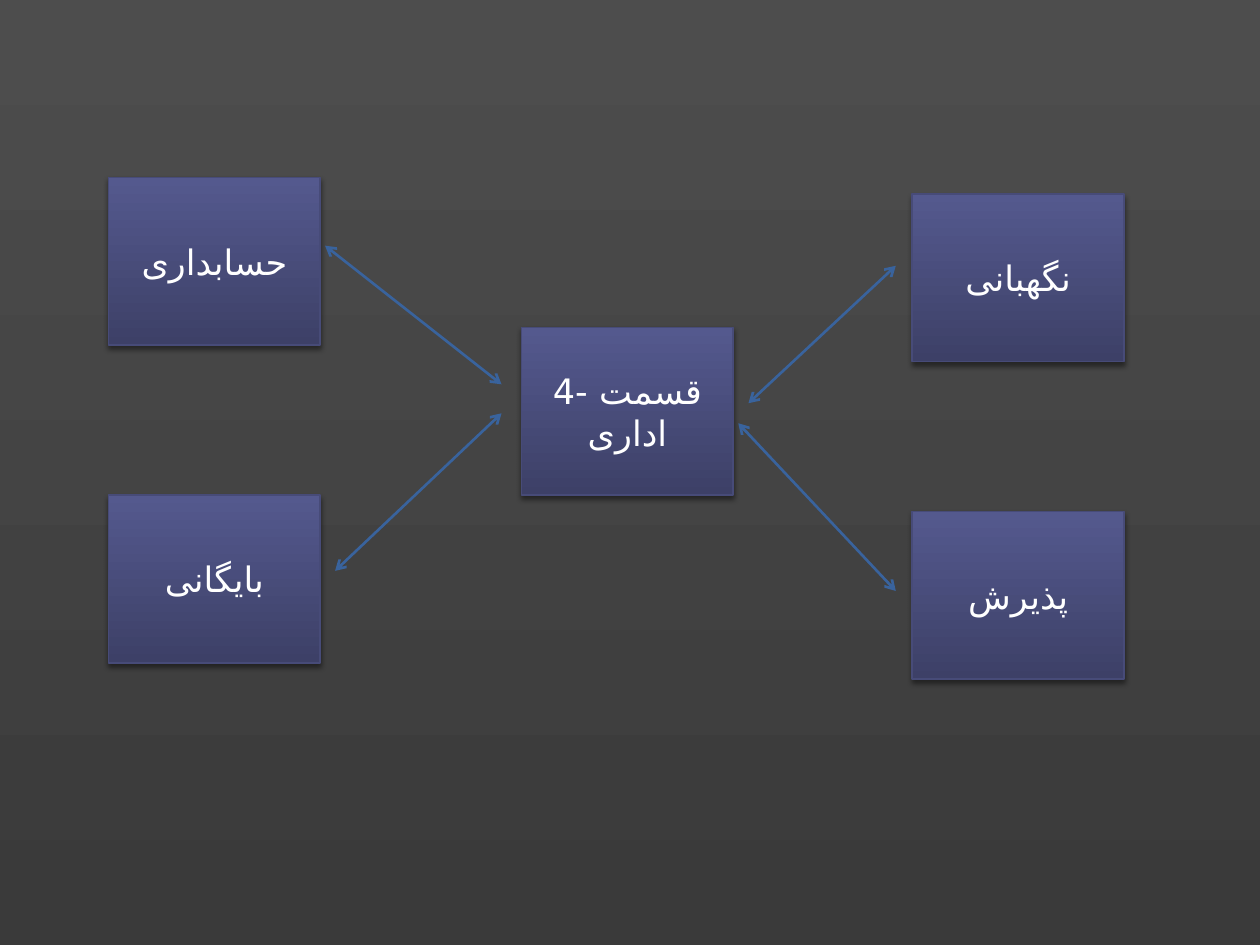
import pptx
import pptx.dml.color
import pptx.enum.shapes
import pptx.enum.text
import pptx.oxml
import pptx.oxml.ns
import pptx.util

Pt = pptx.util.Pt
qn = pptx.oxml.ns.qn
NS = pptx.oxml.ns.nsdecls("a")
COLORS = {
    "bg_top": "4D4D4D",
    "bg_bottom": "3A3A3A",
    "box_top": "54598E",
    "box_bottom": "3D4067",
    "border": "474B78",
    "arrow": "39639D",
    "text": "FFFFFF",
    "shadow": "000000",
}


def rgb(name):
    """Return the named colour."""
    return pptx.dml.color.RGBColor.from_string(COLORS[name])


def add_xml(parent, xml):
    """Append a drawing element given as XML."""
    parent.append(pptx.oxml.parse_xml(xml))


def shade(fill, top, bottom):
    """Give a fill a gradient that runs downwards."""
    fill.gradient()
    fill.gradient_angle = 270
    for stop, name in zip(fill.gradient_stops, (top, bottom)):
        stop.color.rgb = rgb(name)


def write(tf, text, font="DejaVu Sans", size=20, color="text"):
    """Write one centred paragraph into a text frame."""
    tf.word_wrap = True
    tf.vertical_anchor = pptx.enum.text.MSO_ANCHOR.MIDDLE
    p = tf.paragraphs[0]
    p.alignment = pptx.enum.text.PP_ALIGN.CENTER
    r = p.add_run()
    r.text = text
    r.font.size = Pt(size)
    r.font.color.rgb = rgb(color)
    r.font.name = font
    add_xml(r.font._element, f'<a:cs {NS} typeface="{font}"/>')


class Diagram:
    """Hold the box style and the current slide."""

    box_width = 121
    box_height = 95.8

    def __init__(self, s):
        """Start on a slide and shade its background."""
        self.s = s
        shade(s.background.fill, "bg_top", "bg_bottom")

    def box(self, text, left, top):
        """Add a labelled box with a soft shadow."""
        sp = self.s.shapes.add_shape(
            pptx.enum.shapes.MSO_SHAPE.RECTANGLE,
            Pt(left), Pt(top), Pt(self.box_width), Pt(self.box_height),
        )
        shade(sp.fill, "box_top", "box_bottom")
        sp.line.color.rgb = rgb("border")
        sp.line.width = Pt(1)
        sp.shadow.inherit = False
        add_xml(
            sp._element.spPr.find(qn("a:effectLst")),
            f'<a:outerShdw {NS} blurRad="{Pt(3)}" dist="{Pt(2)}" dir="5400000" rotWithShape="0">'
            f'<a:srgbClr val="{COLORS["shadow"]}"><a:alpha val="45000"/></a:srgbClr></a:outerShdw>',
        )
        write(sp.text_frame, text)

    def arrow(self, x1, y1, x2, y2):
        """Add a straight arrow with a head at both ends."""
        c = self.s.shapes.add_connector(
            pptx.enum.shapes.MSO_CONNECTOR.STRAIGHT, Pt(x1), Pt(y1), Pt(x2), Pt(y2)
        )
        c.line.color.rgb = rgb("arrow")
        c.line.width = Pt(1.5)
        ln = c._element.spPr.find(qn("a:ln"))
        for end in ("headEnd", "tailEnd"):
            add_xml(ln, f'<a:{end} {NS} type="arrow"/>')
        add_xml(c._element.spPr, f"<a:effectLst {NS}/>")


def main():
    """Build the department diagram."""
    prs = pptx.Presentation()
    prs.slide_width, prs.slide_height = Pt(720), Pt(540)
    d = Diagram(prs.slides.add_slide(prs.slide_layouts[6]))

    d.box("4- قسمت اداری", 298, 187.2)
    row_gap = 181.4
    columns = (
        (62, 101.5, ("حسابداری", "بایگانی")),
        (521.3, 110.9, ("نگهبانی", "پذیرش")),
    )
    for left, top, labels in columns:
        for row, label in enumerate(labels):
            d.box(label, left, top + row * row_gap)

    for ends in (
        (185.8, 140.4, 286.6, 219.6),
        (286.6, 236.2, 191.5, 326.2),
        (511.9, 151.9, 427.7, 230.4),
        (421.9, 241.9, 511.9, 337.7),
    ):
        d.arrow(*ends)

    prs.save("out.pptx")


if __name__ == "__main__":
    main()
